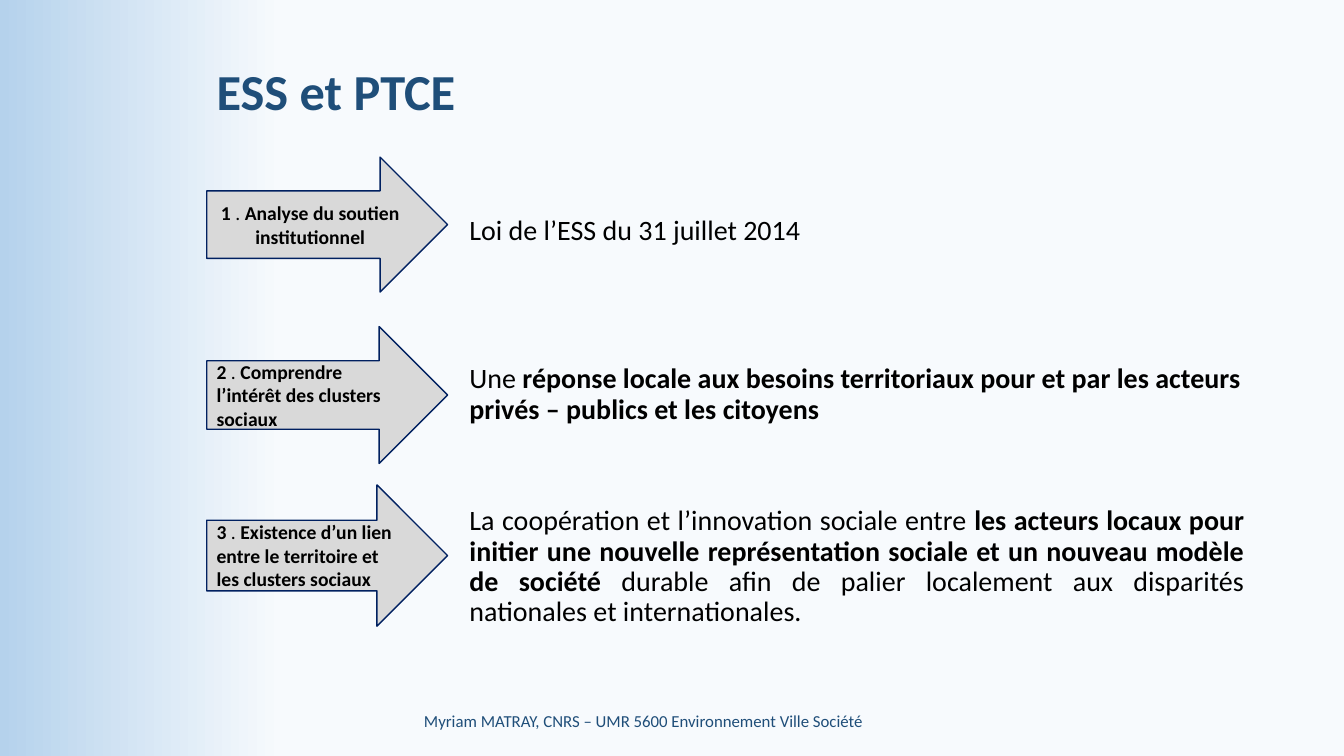
import pptx
import pptx.util
import pptx.dml.color
import pptx.enum.shapes
import pptx.enum.text

Cm, Pt = pptx.util.Cm, pptx.util.Pt
ALIGN = pptx.enum.text.PP_ALIGN
LEFT, MID, FULL = ALIGN.LEFT, ALIGN.CENTER, ALIGN.JUSTIFY
NAVY = "1F4E79"

# Top, height, label alignment, label runs, text shift, text alignment, text runs
# Each run is (wording, bold)
ROWS = [
    (3.96, 3.4, MID,
     [("1 ", True), (". ", False), ("Analyse du soutien institutionnel", True)],
     0.16, FULL, [("Loi de l’ESS du 31 juillet 2014", False)]),
    (8.23, 3.45, LEFT,
     [("2", True), (" .", False),
      (" Comprendre l’intérêt des clusters sociaux", True)],
     0, LEFT,
     [("Une ", False),
      ("réponse locale aux besoins territoriaux pour et par les acteurs "
       "privés – publics et les citoyens", True)]),
    (12.22, 3.56, LEFT,
     [("3", True), (" .", False),
      (" Existence d’un lien entre le territoire et les clusters sociaux", True)],
     0.29, FULL,
     [("La coopération et l’innovation sociale entre ", False),
      ("les acteurs locaux pour initier une nouvelle représentation sociale "
       "et un nouveau modèle de société ", True),
      ("durable afin de palier localement aux disparités nationales et "
       "internationales.", False)]),
]


def rgb(code):
    return pptx.dml.color.RGBColor.from_string(code)


def write(shape, runs, size, color="000000", align=LEFT, gap=1.0):
    """Fill a shape with one vertically centred paragraph."""
    frame = shape.text_frame
    frame.word_wrap = True
    frame.vertical_anchor = pptx.enum.text.MSO_ANCHOR.MIDDLE
    para = frame.paragraphs[0]
    para.alignment = align
    para.line_spacing = gap
    para.font.name = "Calibri"
    para.font.size = Pt(size)
    para.font.color.rgb = rgb(color)
    for text, bold in runs:
        run = para.add_run()
        run.text = text
        run.font.bold = bold


def label(slide, box, runs, size, **style):
    shape = slide.shapes.add_textbox(*map(Cm, box))
    write(shape, runs, size, **style)


def arrow(slide, box, runs, align):
    kind = pptx.enum.shapes.MSO_SHAPE.RIGHT_ARROW
    shape = slide.shapes.add_shape(kind, *map(Cm, box))
    shape.shadow.inherit = False
    shape.fill.solid()
    shape.fill.fore_color.rgb = rgb("D9D9D9")
    shape.line.color.rgb = rgb("002060")
    shape.line.width = Pt(1)
    write(shape, runs, 14, align=align)


def topic(slide, box, head, side, body, flow, shift):
    """Arrow at the left of the box, explanation at its right."""
    left, top, width, height = box
    wide = 6.07
    arrow(slide, (left, top, wide, height), head, side)
    start = wide + 0.3
    label(slide, (left + start, top + shift, width - start, height),
          body, 20, align=flow, gap=0.9)


def backdrop(slide):
    """Blue fade along the left edge."""
    fill = slide.background.fill
    fill.gradient()
    fill.gradient_angle = 0
    for stop, place, code in zip(fill.gradient_stops, (0, 0.21),
                                 ("B5D2EC", "F7FAFD")):
        stop.position = place
        stop.color.rgb = rgb(code)


def main():
    deck = pptx.Presentation()
    deck.slide_width, deck.slide_height = Cm(33.87), Cm(19.05)
    slide = deck.slides.add_slide(deck.slide_layouts[6])
    backdrop(slide)

    # Title
    label(slide, (5.21, 0.79, 26.97, 3.18), [("ESS et PTCE", True)], 36,
          color=NAVY, gap=0.9)

    # Three topics
    for top, height, side, head, shift, flow, body in ROWS:
        topic(slide, (5.21, top, 26.4, height), head, side, body, flow, shift)

    # Footer
    label(slide, (9.96, 17.65, 12.52, 1.02),
          [("Myriam MATRAY, CNRS – UMR 5600 Environnement Ville Société", False)],
          12, color=NAVY, align=MID)

    deck.save("out.pptx")


if __name__ == "__main__":
    main()
